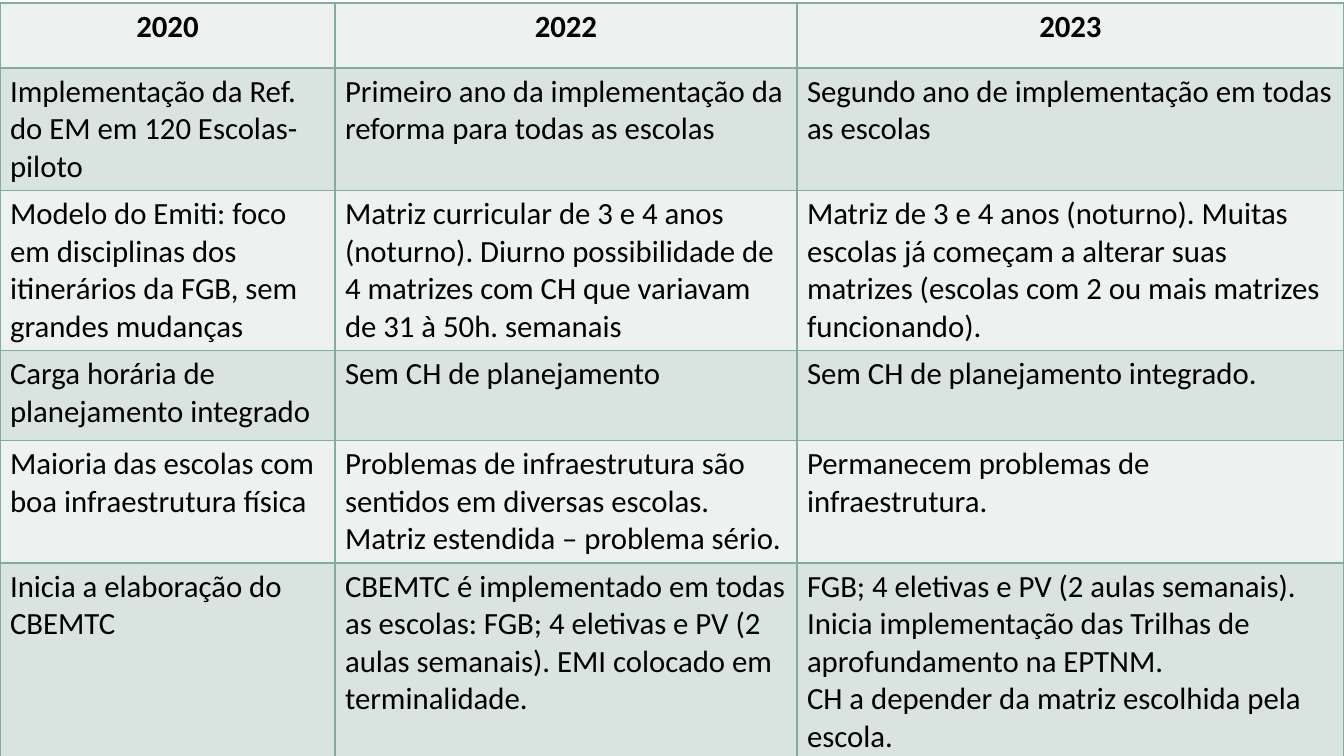
from pptx import Presentation as Deck
from pptx.dml.color import RGBColor as Rgb
from pptx.enum.text import PP_ALIGN as Align
from pptx.oxml import parse_xml as to_xml
from pptx.oxml.ns import nsdecls
from pptx.util import Emu, Pt

SCALE = 12192000 / 1344
FONT = "Calibri"
HUES = {"light": "EDF1EF", "dark": "D9E3DF", "edge": "84AC9D", "text": "000000"}
COLS = [335, 462, 547]
HEAD, BODY = 65, 90
YEARS = ["2020", "2022", "2023"]
ROWS = [
    ["Implementação da Ref. do EM em 120 Escolas-piloto",
     "Primeiro ano da implementação da reforma para todas as escolas",
     "Segundo ano de implementação em todas as escolas"],
    ["Modelo do Emiti: foco em disciplinas dos itinerários da FGB, sem grandes mudanças",
     "Matriz curricular de 3 e 4 anos (noturno). Diurno possibilidade de 4 matrizes "
     "com CH que variavam de 31 à 50h. semanais",
     "Matriz de 3 e 4 anos (noturno). Muitas escolas já começam a alterar suas "
     "matrizes (escolas com 2 ou mais matrizes funcionando)."],
    ["Carga horária de planejamento integrado",
     "Sem CH de planejamento",
     "Sem CH de planejamento integrado."],
    ["Maioria das escolas com boa infraestrutura física",
     "Problemas de infraestrutura são sentidos em diversas escolas. "
     "Matriz estendida – problema sério.",
     "Permanecem problemas de infraestrutura."],
    ["Inicia a elaboração do CBEMTC",
     "CBEMTC é implementado em todas as escolas: FGB; 4 eletivas e PV "
     "(2 aulas semanais). EMI colocado em terminalidade.",
     "FGB; 4 eletivas e PV (2 aulas semanais). Inicia implementação das Trilhas de "
     "aprofundamento na EPTNM.\nCH a depender da matriz escolhida pela escola."],
]


def px(num):
    return Emu(round(num * SCALE))


def put_text(frame, text, size=22, bold=False, align=Align.LEFT, hue="text"):
    frame.text = text
    for para in frame.paragraphs:
        para.alignment = align
        for run in para.runs:
            font = run.font
            font.name, font.size, font.bold = FONT, Pt(size), bold
            font.color.rgb = Rgb.from_string(HUES[hue])


def put_edges(cell, hue="edge", width=1):
    props = cell._tc.get_or_add_tcPr()
    for side in "LRTB":
        props.append(to_xml(
            f'<a:ln{side} {nsdecls("a")} w="{Pt(width)}"><a:solidFill>'
            f'<a:srgbClr val="{HUES[hue]}"/></a:solidFill></a:ln{side}>'))


def put_fill(cell, hue):
    cell.fill.solid()
    cell.fill.fore_color.rgb = Rgb.from_string(HUES[hue])


def put_table(slide, left, top, high):
    data = [YEARS] + ROWS
    frame = slide.shapes.add_table(
        len(data), len(COLS), px(left), px(top), px(sum(COLS)), px(high))
    table = frame.table
    for col, wide in zip(table.columns, COLS):
        col.width = px(wide)
    for i, texts in enumerate(data):
        table.rows[i].height = px(BODY if i else HEAD)
        for j, text in enumerate(texts):
            cell = table.cell(i, j)
            put_edges(cell)
            put_fill(cell, "dark" if i % 2 else "light")
            put_text(cell.text_frame, text, bold=i == 0,
                     align=Align.LEFT if i else Align.CENTER)
    frame.height = px(high)


def main():
    deck = Deck()
    deck.slide_width, deck.slide_height = px(1344), px(756)
    slide = deck.slides.add_slide(deck.slide_layouts[6])
    put_table(slide, 0, 3, 750)
    deck.save("out.pptx")


if __name__ == "__main__":
    main()
